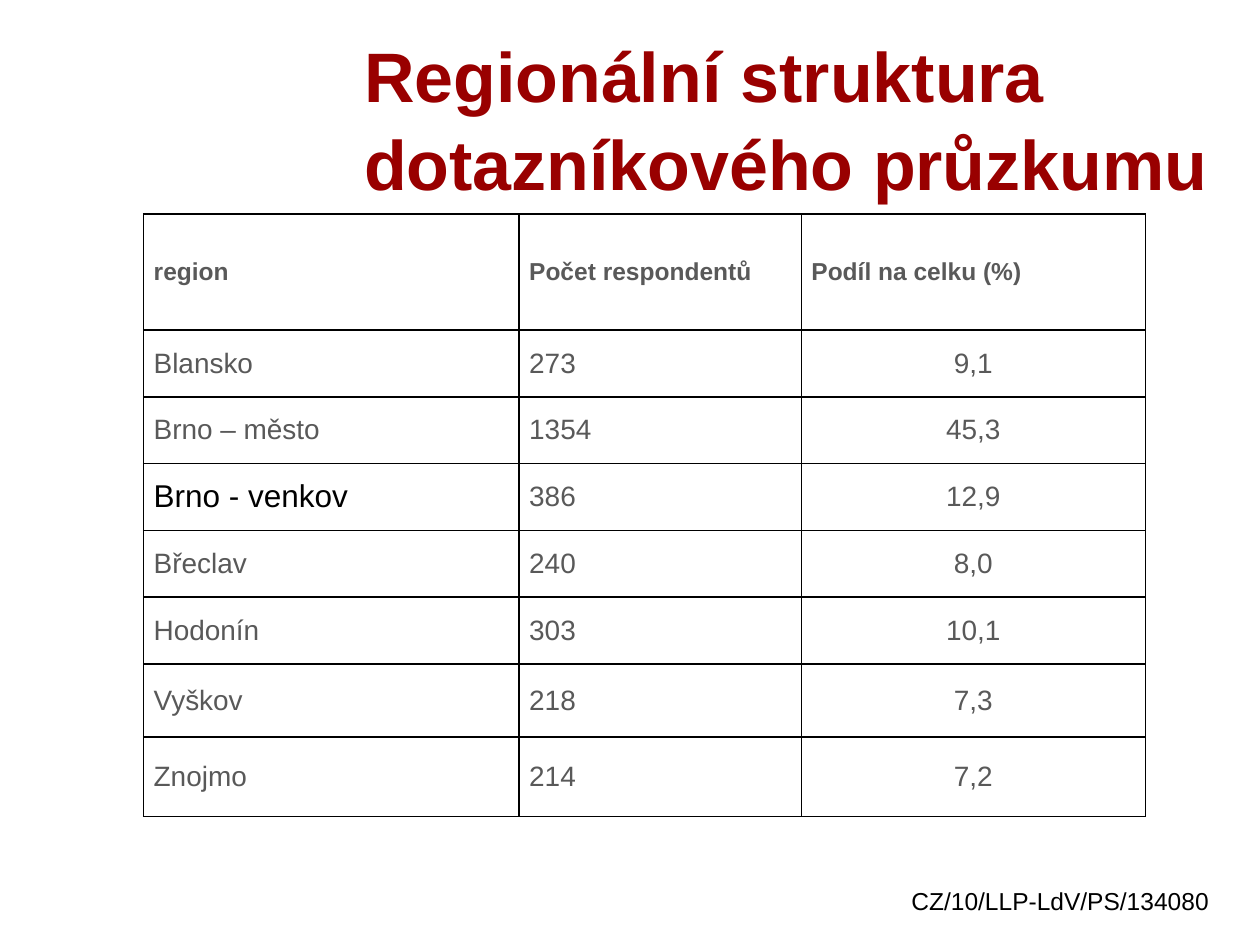
from lxml import etree
from pptx import Presentation
from pptx import util as u
from pptx.dml import color
from pptx.enum import text
from pptx.oxml import ns

COLORS = {"title": "990000", "body": "595959", "black": "000000", "white": "FFFFFF"}
HEADERS = ["region", "Počet respondentů", "Podíl na celku (%)"]
REGIONS = [
    ("Blansko", "273", "9,1"),
    ("Brno – město", "1354", "45,3"),
    ("Brno - venkov", "386", "12,9"),
    ("Břeclav", "240", "8,0"),
    ("Hodonín", "303", "10,1"),
    ("Vyškov", "218", "7,3"),
    ("Znojmo", "214", "7,2"),
]
COLUMN_WIDTHS = [2.98, 2.24, 2.73]
ROW_HEIGHTS = [0.92] + [0.53] * 5 + [0.58, 0.63]


def write_text(frame, content, size=16, color_name="body", bold=False, align=text.PP_ALIGN.LEFT):
    """Write one formatted paragraph into a text frame and return it."""
    paragraph = frame.paragraphs[0]
    paragraph.alignment = align
    run = paragraph.add_run()
    run.text = content
    run.font.name = "Arial"
    run.font.size = u.Pt(size)
    run.font.bold = bold
    run.font.color.rgb = color.RGBColor.from_string(COLORS[color_name])
    return paragraph


def add_title(slide, left, top, width, height):
    """Place and format the title placeholder."""
    title = slide.shapes.title
    title.left, title.top = u.Inches(left), u.Inches(top)
    title.width, title.height = u.Inches(width), u.Inches(height)
    frame = title.text_frame
    frame.word_wrap = True
    frame.auto_size = text.MSO_AUTO_SIZE.NONE
    frame.vertical_anchor = text.MSO_ANCHOR.MIDDLE
    paragraph = write_text(frame, "Regionální struktura dotazníkového průzkumu",
                           size=40, color_name="title", bold=True)
    paragraph.line_spacing = 1.05


def add_project_code(slide, left, top, width, height):
    """Place the project code at the foot of the slide."""
    box = slide.shapes.add_textbox(*map(u.Inches, (left, top, width, height)))
    box.text_frame.word_wrap = True
    write_text(box.text_frame, "CZ/10/LLP-LdV/PS/134080", size=14,
               color_name="black", align=text.PP_ALIGN.CENTER)


def set_borders(cell):
    """Draw a thin black line on all four sides of a cell."""
    properties = cell._tc.get_or_add_tcPr()
    for index, side in enumerate(("a:lnL", "a:lnR", "a:lnT", "a:lnB")):
        line = etree.Element(ns.qn(side), w=str(u.Pt(1)))
        fill = etree.SubElement(line, ns.qn("a:solidFill"))
        etree.SubElement(fill, ns.qn("a:srgbClr"), val=COLORS["black"])
        properties.insert(index, line)


def format_cell(cell):
    """Set the fill, margins, anchor and borders of a cell."""
    cell.fill.solid()
    cell.fill.fore_color.rgb = color.RGBColor.from_string(COLORS["white"])
    cell.margin_left = cell.margin_right = u.Inches(0.08)
    cell.margin_top = cell.margin_bottom = u.Inches(0.04)
    cell.vertical_anchor = text.MSO_ANCHOR.MIDDLE
    set_borders(cell)


def cell_format(row, column, content):
    """Return the text format for a table cell."""
    if row == 0:
        return {"size": 14, "bold": True}
    if content == "Brno - venkov":
        return {"size": 18, "color_name": "black"}
    return {"align": text.PP_ALIGN.CENTER} if column == 2 else {}


def add_region_table(slide, left, top, width, height):
    """Place the table of respondents by region."""
    rows = [HEADERS, *REGIONS]
    table = slide.shapes.add_table(
        len(rows), len(HEADERS), *map(u.Inches, (left, top, width, height))).table
    for column, column_width in zip(table.columns, COLUMN_WIDTHS):
        column.width = u.Inches(column_width)
    for row, row_height in zip(table.rows, ROW_HEIGHTS):
        row.height = u.Inches(row_height)
    for row_index, values in enumerate(rows):
        for column_index, content in enumerate(values):
            cell = table.cell(row_index, column_index)
            format_cell(cell)
            write_text(cell.text_frame, content,
                       **cell_format(row_index, column_index, content))


def main():
    """Build and save the presentation."""
    presentation = Presentation()
    presentation.slide_width, presentation.slide_height = u.Inches(10), u.Inches(7.5)
    slide = presentation.slides.add_slide(presentation.slide_layouts[5])
    add_title(slide, 2.79, 0.3, 6.94, 1.25)
    add_project_code(slide, 6.83, 6.98, 3.17, 0.52)
    add_region_table(slide, 1.14, 1.7, sum(COLUMN_WIDTHS), sum(ROW_HEIGHTS))
    presentation.save("out.pptx")


if __name__ == "__main__":
    main()
